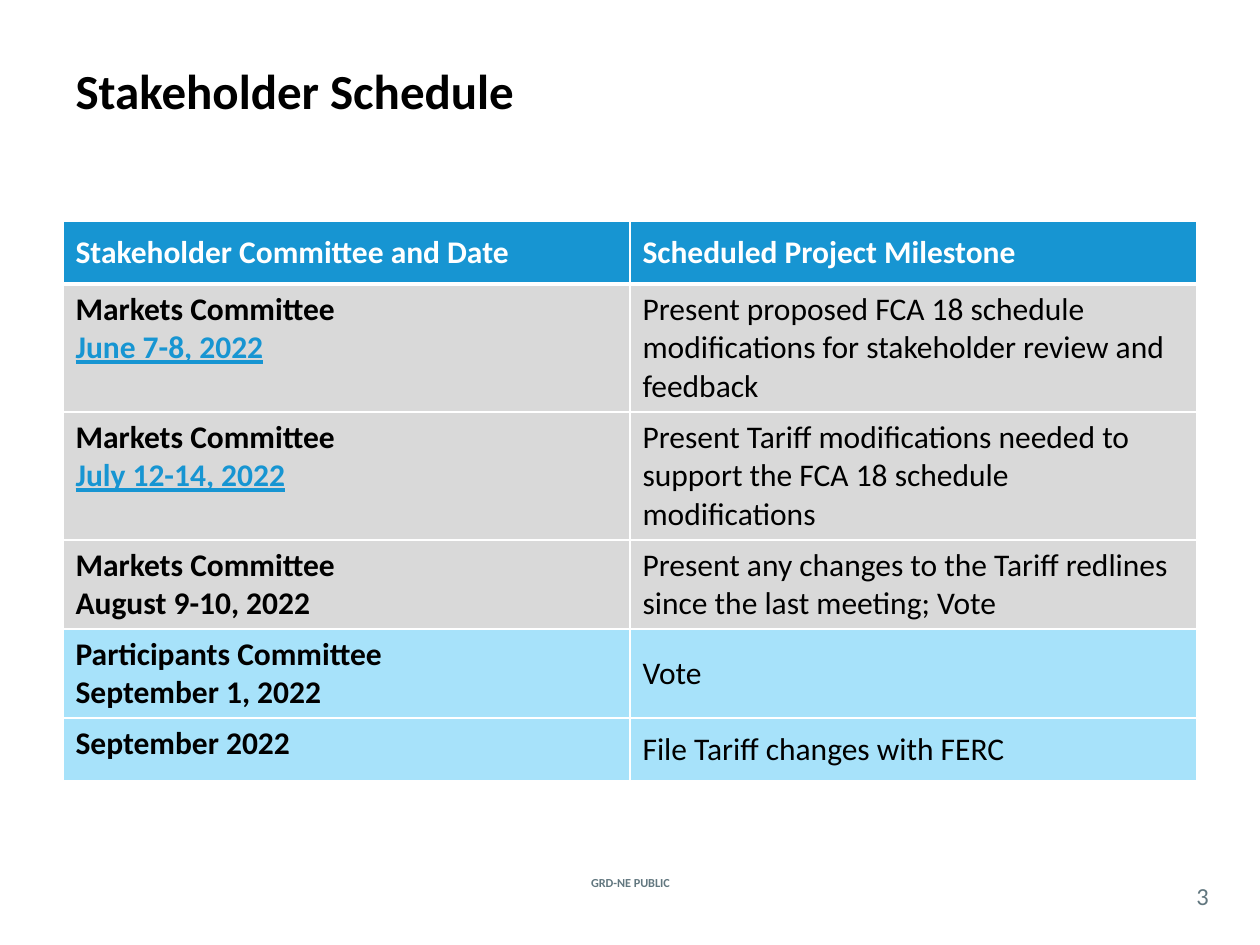
from pptx import Presentation
from pptx.dml.color import RGBColor
from pptx.enum.text import MSO_ANCHOR as Anchor, PP_ALIGN as Align
from pptx.oxml import parse_xml
from pptx.oxml.ns import nsdecls
from pptx.util import Pt

EMU_PER_PX = 914400 / 126
BLACK, WHITE, SLATE = "000000", "FFFFFF", "62777F"
BLUE, GREY, PALE_BLUE = "1795D2", "D9D9D9", "A7E2FA"


def px(length):
    return round(length * EMU_PER_PX)


def write(frame, lines, size, bold=False, align=Align.LEFT, anchor=Anchor.MIDDLE):
    """Fill a text frame with (text, colour, underlined) lines."""
    frame.word_wrap = True
    frame.vertical_anchor = anchor
    for number, (text, colour, underlined) in enumerate(lines):
        paragraph = frame.add_paragraph() if number else frame.paragraphs[0]
        paragraph.alignment = align
        run = paragraph.add_run()
        run.text = text
        style = {"name": "Calibri", "size": Pt(size), "bold": bold, "underline": underlined}
        for attribute, value in style.items():
            setattr(run.font, attribute, value)
        run.font.color.rgb = RGBColor.from_string(colour)


deck = Presentation()
deck.slide_width, deck.slide_height = px(1260), px(945)
slide = deck.slides.add_slide(deck.slide_layouts[5])

title = slide.shapes.title
title.left, title.top, title.width, title.height = px(63), px(53), px(1134), px(73)
write(title.text_frame, [("Stakeholder Schedule", BLACK, False)], 28, bold=True)

# Footer label and page number
for text, left, top, width, height, size, bold in [
    ("GRD-NE PUBLIC", 538, 872, 185, 21, 7, True),
    ("3", 1176, 877, 53, 37, 14, False),
]:
    footer = slide.shapes.add_textbox(px(left), px(top), px(width), px(height)).text_frame
    for side in ("left", "top", "right", "bottom"):
        setattr(footer, f"margin_{side}", 0)
    write(footer, [(text, SLATE, False)], size, bold, Align.CENTER)

# Row height, fill, committee and date lines, milestone
schedule = [
    (63, BLUE, [("Stakeholder Committee and Date", WHITE, False)],
     "Scheduled Project Milestone"),
    (128, GREY, [("Markets Committee", BLACK, False), ("June 7-8, 2022", BLUE, True)],
     "Present proposed FCA 18 schedule modifications for stakeholder review and feedback"),
    (128, GREY, [("Markets Committee", BLACK, False), ("July 12-14, 2022", BLUE, True)],
     "Present Tariff modifications needed to support the FCA 18 schedule modifications"),
    (89, GREY, [("Markets Committee", BLACK, False), ("August 9-10, 2022", BLACK, False)],
     "Present any changes to the Tariff redlines since the last meeting; Vote"),
    (89, PALE_BLUE, [("Participants Committee", BLACK, False), ("September 1, 2022", BLACK, False)],
     "Vote"),
    (63, PALE_BLUE, [("September 2022", BLACK, False)],
     "File Tariff changes with FERC"),
]
table = slide.shapes.add_table(
    len(schedule), 2, px(63), px(221), px(1134), px(sum(row[0] for row in schedule))
).table

for row, (height, fill, committee, milestone) in enumerate(schedule):
    table.rows[row].height = px(height)
    header = row == 0
    milestone_lines = [(milestone, WHITE if header else BLACK, False)]
    for column, lines in enumerate([committee, milestone_lines]):
        cell = table.cell(row, column)
        cell.fill.solid()
        cell.fill.fore_color.rgb = RGBColor.from_string(fill)
        centred = header or column == 1
        cell.vertical_anchor = Anchor.MIDDLE if centred else Anchor.TOP
        write(cell.text_frame, lines, 18, bold=header or column == 0,
              anchor=None)
        # A thick rule parts the header from the body; borders precede the fill
        widths = {"L": 1, "R": 1, "T": 3 if row == 1 else 1, "B": 3 if header else 1}
        for position, (side, width) in enumerate(widths.items()):
            cell._tc.get_or_add_tcPr().insert(position, parse_xml(
                f'<a:ln{side} {nsdecls("a")} w="{Pt(width)}"><a:solidFill>'
                f'<a:srgbClr val="{WHITE}"/></a:solidFill></a:ln{side}>'))

deck.save("out.pptx")
